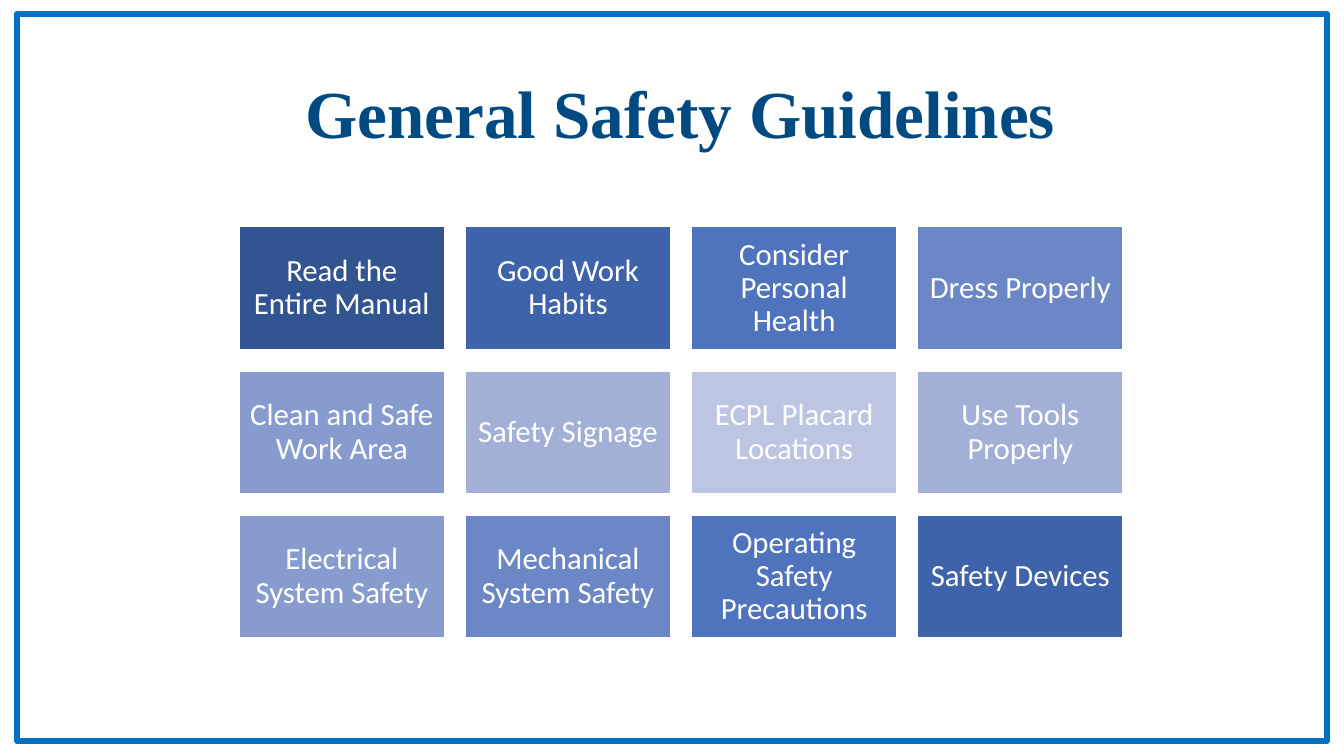
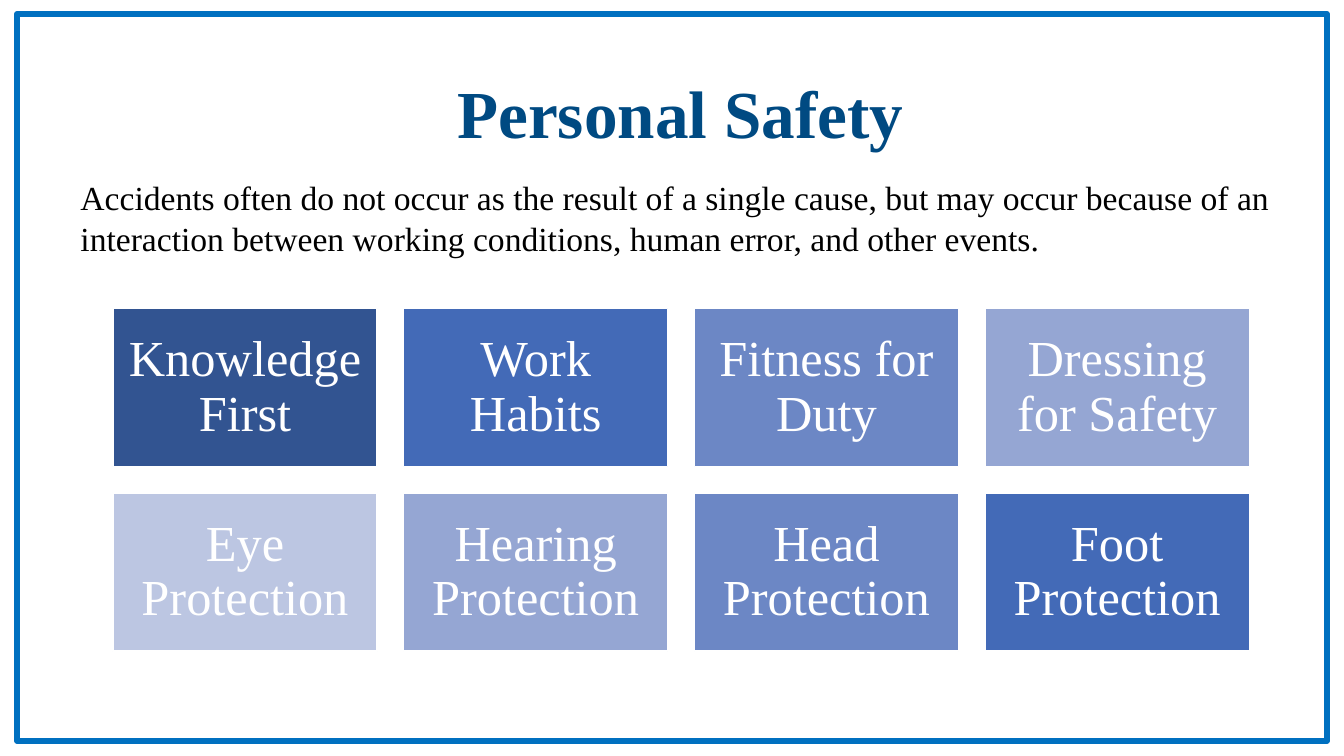
import pptx
import pptx.util
import pptx.dml.color
import pptx.enum.shapes
import pptx.enum.text

EMU_PER_PX = 9144  # 100 px to the inch
SERIF, SANS = "Times New Roman", "Calibri"
COLORS = {
    "frame": "0070C0", "title": "004A82", "body": "000000", "white": "FFFFFF",
    "navy": "325491", "royal": "3E63AA", "cobalt": "436AB7", "blue": "4F73BD",
    "steel": "6C87C5", "soft": "879BCE", "haze": "95A6D3", "mist": "A2B0D7",
    "pale": "BCC6E2",
}
ALIGN = pptx.enum.text.PP_ALIGN


def px(n):
    return pptx.util.Emu(round(n * EMU_PER_PX))


def rgb(name):
    return pptx.dml.color.RGBColor.from_string(COLORS[name])


def write(tf, text, size, font=SERIF, color="white", bold=False,
          align=ALIGN.CENTER, spacing=1.0):
    """Fill a text frame, one paragraph per line of text."""
    for i, line in enumerate(text.split("\n")):
        p = tf.paragraphs[0] if i == 0 else tf.add_paragraph()
        p.alignment, p.line_spacing = align, spacing
        r = p.add_run()
        r.text = line
        r.font.name, r.font.size, r.font.bold = font, pptx.util.Pt(size), bold
        r.font.color.rgb = rgb(color)


class Deck:
    def __init__(self):
        self.prs = pptx.Presentation()
        self.prs.slide_width, self.prs.slide_height = px(1333), px(750)
        self.s = None

    def slide(self, title, title_width):
        """Start a framed slide with its title."""
        self.s = self.prs.slides.add_slide(self.prs.slide_layouts[6])
        self.rect(17, 14, 1299, 721, line="frame", weight=4.5)
        self.text(675 - title_width / 2, 66, title_width, 91, title,
                  size=48, color="title", bold=True)

    def rect(self, x, y, w, h, fill=None, line="white", weight=1):
        sp = self.s.shapes.add_shape(pptx.enum.shapes.MSO_SHAPE.RECTANGLE,
                                     px(x), px(y), px(w), px(h))
        sp.shadow.inherit = False
        if fill:
            sp.fill.solid()
            sp.fill.fore_color.rgb = rgb(fill)
        else:
            sp.fill.background()
        sp.line.color.rgb = rgb(line)
        sp.line.width = pptx.util.Pt(weight)
        return sp

    def text(self, x, y, w, h, text, **style):
        tf = self.s.shapes.add_textbox(px(x), px(y), px(w), px(h)).text_frame
        tf.word_wrap = False
        tf.auto_size = pptx.enum.text.MSO_AUTO_SIZE.SHAPE_TO_FIT_TEXT
        write(tf, text, **style)

    def tile(self, x, y, w, h, text, fill, inset, **style):
        tf = self.rect(x, y, w, h, fill).text_frame
        tf.word_wrap = True
        tf.vertical_anchor = pptx.enum.text.MSO_ANCHOR.MIDDLE
        tf.margin_left = tf.margin_right = px(inset)
        tf.margin_top = tf.margin_bottom = px(inset)
        write(tf, text, spacing=0.9, **style)

    def grid(self, labels, shades, box, tile, inset, cols=4, **style):
        """Spread tiles over box; shades run forward, then back."""
        x, y, width, height = box
        w, h = tile
        rows = len(labels) // cols
        dx, dy = (width - w) / (cols - 1), (height - h) / (rows - 1)
        half = len(labels) // 2
        for i, label in enumerate(labels):
            row, col = divmod(i, cols)
            self.tile(x + col * dx, y + row * dy, w, h, label,
                      shades[half - abs(i - half)], inset, **style)


def main():
    deck = Deck()

    deck.slide("General Safety Guidelines", 772)
    deck.grid(
        ["Read the Entire Manual", "Good Work Habits",
         "Consider Personal Health", "Dress Properly",
         "Clean and Safe Work Area", "Safety Signage",
         "ECPL Placard Locations", "Use Tools Properly",
         "Electrical System Safety", "Mechanical System Safety",
         "Operating Safety Precautions", "Safety Devices"],
        ["navy", "royal", "blue", "steel", "soft", "mist", "pale"],
        box=(237, 225, 877, 408), tile=(204, 122), inset=9,
        size=22, font=SANS)

    deck.slide("Personal Safety", 467)
    deck.text(70, 171, 1210, 91,
              "Accidents often do not occur as the result of a single cause, "
              "but may occur because of an\n"
              "interaction between working conditions, human error, "
              "and other events.",
              size=24, color="body", align=ALIGN.LEFT)
    deck.grid(
        ["Knowledge First", "Work Habits", "Fitness for Duty",
         "Dressing for Safety", "Eye Protection", "Hearing Protection",
         "Head Protection", "Foot Protection"],
        ["navy", "cobalt", "steel", "haze", "pale"],
        box=(112, 306, 1127, 340), tile=(262, 157), inset=15, size=36)

    deck.prs.save("out.pptx")


if __name__ == "__main__":
    main()
